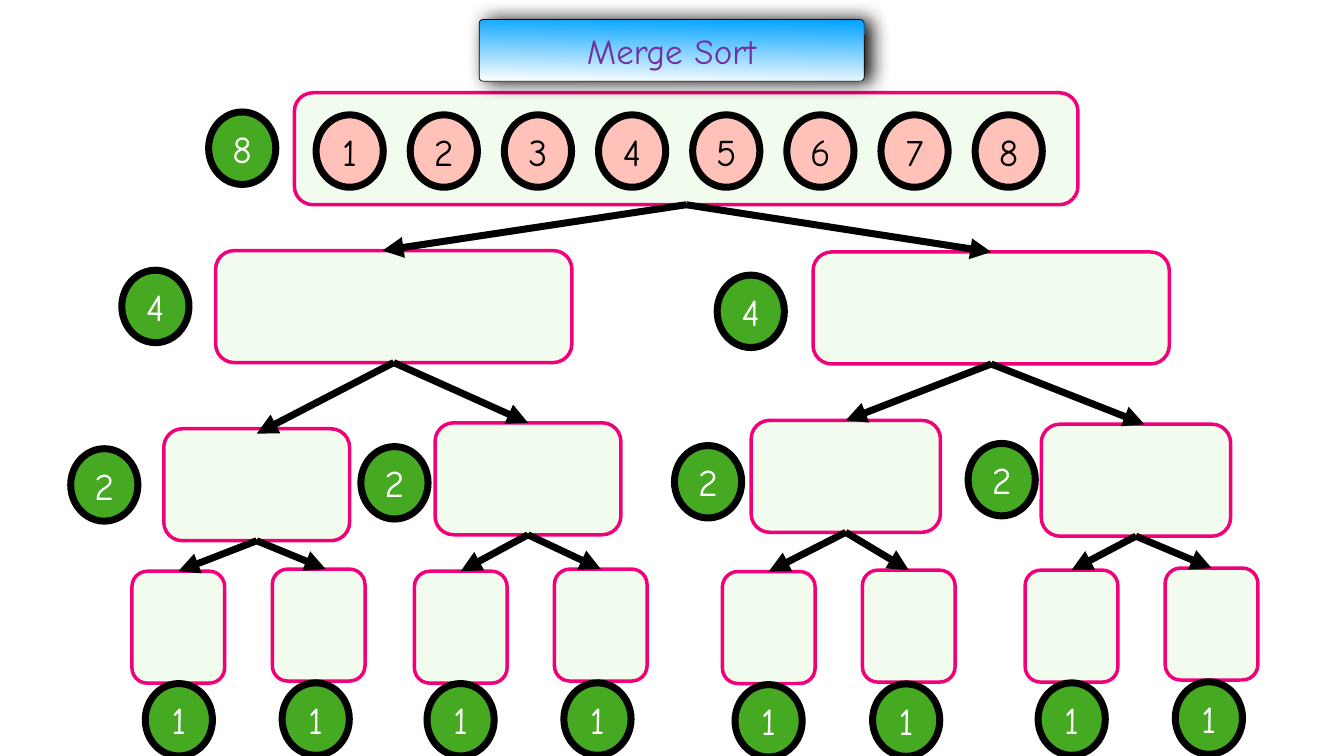
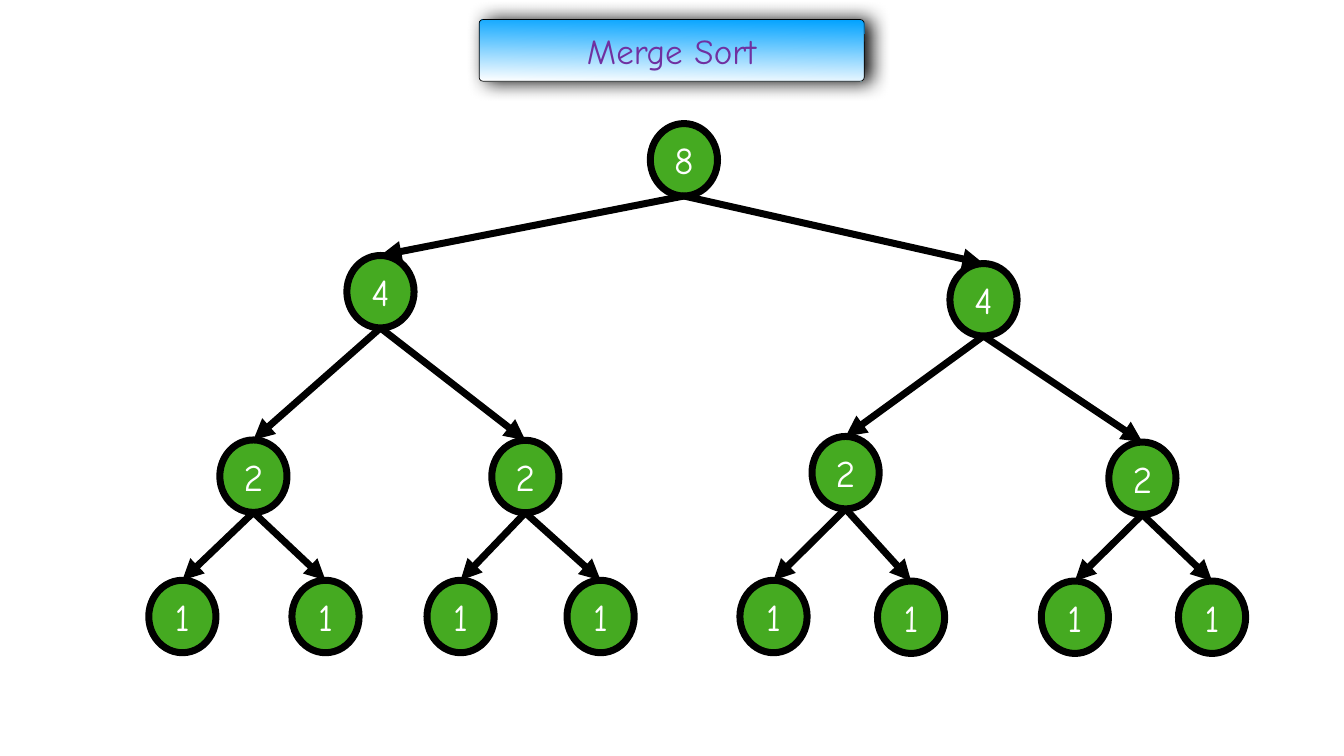
import pptx
import pptx.dml.color
import pptx.enum.shapes
import pptx.enum.text
import pptx.oxml
import pptx.oxml.ns
import pptx.util

Pt = pptx.util.Pt
MSO_SHAPE = pptx.enum.shapes.MSO_SHAPE
qn = pptx.oxml.ns.qn
RGB = pptx.dml.color.RGBColor.from_string

COLORS = {
    "title_top": "00A2FF", "title_bottom": "FFFFFF", "title_text": "7030A0",
    "box": "C0EFAF", "box_edge": "F10079",
    "count": "45AA21", "count_text": "FFFFFF",
    "item": "FFC1B8", "item_text": "000000", "ink": "000000",
}
FONT = "Comic Neue"
FRAME_FORMAT = {
    "margin_left": Pt(4), "margin_right": Pt(4),
    "margin_top": Pt(4), "margin_bottom": Pt(4),
    "vertical_anchor": pptx.enum.text.MSO_ANCHOR.MIDDLE,
    "word_wrap": True,
}
DRAWING_NS = 'xmlns:a="http://schemas.openxmlformats.org/drawingml/2006/main"'
CIRCLE_W, CIRCLE_H = 96, 103.5
BOX_H = 160


def draw_shape(slide, kind, frame, fill, edge, edge_width, text="", size=54, ink="ink"):
    shape = slide.shapes.add_shape(kind, *[Pt(length) for length in frame])
    shape.shadow.inherit = False
    shape.fill.solid()
    shape.fill.fore_color.rgb = RGB(COLORS[fill])
    shape.line.color.rgb = RGB(COLORS[edge])
    shape.line.width = Pt(edge_width)
    if text:
        for name, value in FRAME_FORMAT.items():
            setattr(shape.text_frame, name, value)
        paragraph = shape.text_frame.paragraphs[0]
        paragraph.alignment = pptx.enum.text.PP_ALIGN.CENTER
        run = paragraph.add_run()
        run.text = text
        run.font.color.rgb = RGB(COLORS[ink])
        for name, value in {"name": FONT, "size": Pt(size)}.items():
            setattr(run.font, name, value)
    return shape


def draw_arrow(slide, start, end):
    arrow = slide.shapes.add_connector(
        pptx.enum.shapes.MSO_CONNECTOR.STRAIGHT,
        *[Pt(length) for length in (*start, *end)])
    arrow.line.color.rgb = RGB(COLORS["ink"])
    arrow.line.width = Pt(10)
    properties = arrow.element.spPr
    properties.find(qn("a:ln")).append(
        pptx.oxml.parse_xml(f'<a:tailEnd {DRAWING_NS} type="triangle"/>'))
    properties.append(pptx.oxml.parse_xml(f"<a:effectLst {DRAWING_NS}/>"))


# Trees are listed level by level: node i has children 2i + 1 and 2i + 2
counts = [8] + [4] * 2 + [2] * 4 + [1] * 8

# Split boxes: left, top, width
boxes = [
    (420.5, 132.5, 1119.5),
    (308, 358, 509), (1161.5, 360, 509),
    (234, 612.5, 265.5), (621.5, 604, 265.5), (1073, 600.5, 270.5), (1487.5, 606, 270.5),
    (188.5, 816, 132.5), (389, 813, 132.5), (592, 816, 132.5), (792, 813, 132.5),
    (1032, 816.5, 132.5), (1232, 814.5, 132.5), (1464.5, 814.5, 132.5), (1664.5, 811.5, 132.5),
]
# Arrow tips that stand off the middle of a box's top edge
tip_shifts = {1: (-16, 0), 3: (0, 7), 6: (12, 0), 8: (10, 0)}

# Left and top of the count circles, beside the boxes and as a tree
beside_boxes = [
    (298, 160),
    (174, 386), (1024.5, 393),
    (101, 641), (515.5, 638), (963.5, 636.5), (1383, 633.5),
    (207.5, 976.5), (403, 975.5), (610, 976.5), (805.5, 975.5),
    (1050, 978), (1246.5, 977), (1483, 975.5), (1679, 974),
]
as_tree = [
    (929, 176.5),
    (495.5, 365), (1357, 376.5),
    (314, 628.5), (702.5, 629), (1160, 623.5), (1584, 631.5),
    (212.5, 829), (417, 829), (610, 829), (810, 829),
    (1057, 829), (1253.5, 830), (1487.5, 830), (1683.5, 830),
]

presentation = pptx.Presentation()
presentation.slide_width = Pt(1920)
presentation.slide_height = Pt(1080)

for split_boxes, circles in ((boxes, beside_boxes), ([], as_tree)):
    slide = presentation.slides.add_slide(presentation.slide_layouts[6])

    # Translucent boxes
    for left, top, width in split_boxes:
        box = draw_shape(slide, MSO_SHAPE.ROUNDED_RECTANGLE, (left, top, width, BOX_H),
                         "box", "box_edge", 5)
        box_color = box.element.spPr.find(qn("a:solidFill"))[0]
        box_color.append(pptx.oxml.parse_xml(f'<a:alpha {DRAWING_NS} val="21000"/>'))

    # Title band with gradient and shadow
    title = draw_shape(slide, MSO_SHAPE.ROUNDED_RECTANGLE, (684.5, 28, 550, 88),
                       "title_top", "ink", 1, "Merge Sort", 50, "title_text")
    title.adjustments[0] = 0.06
    title.fill.gradient()
    title.fill.gradient_angle = 269
    for stop, color in zip(title.fill.gradient_stops, ("title_top", "title_bottom")):
        stop.color.rgb = RGB(COLORS[color])
    title.element.spPr.find(qn("a:effectLst")).append(pptx.oxml.parse_xml(
        f'<a:outerShdw {DRAWING_NS} blurRad="{Pt(28)}" dist="{Pt(9)}" dir="0" rotWithShape="0">'
        f'<a:srgbClr val="{COLORS["ink"]}"><a:alpha val="97000"/></a:srgbClr></a:outerShdw>'))

    # Count circles
    for count, (left, top) in zip(counts, circles):
        draw_shape(slide, MSO_SHAPE.OVAL, (left, top, CIRCLE_W, CIRCLE_H),
                   "count", "ink", 10, str(count), ink="count_text")

    # Items waiting in the top box
    if split_boxes:
        for i in range(8):
            draw_shape(slide, MSO_SHAPE.OVAL, (451.5 + 134.5 * i, 164, CIRCLE_W, CIRCLE_H),
                       "item", "ink", 10, str(i + 1), ink="item_text")

    # Arrows from each parent's bottom to its children's tops
    nodes = split_boxes or [(left, top, CIRCLE_W) for left, top in circles]
    node_height = BOX_H if split_boxes else CIRCLE_H
    shifts = tip_shifts if split_boxes else {}
    for child in range(1, len(nodes)):
        parent_left, parent_top, parent_width = nodes[(child - 1) // 2]
        left, top, width = nodes[child]
        shift_x, shift_y = shifts.get(child, (0, 0))
        draw_arrow(slide, (parent_left + parent_width / 2, parent_top + node_height),
                   (left + width / 2 + shift_x, top + shift_y))

presentation.save("out.pptx")
